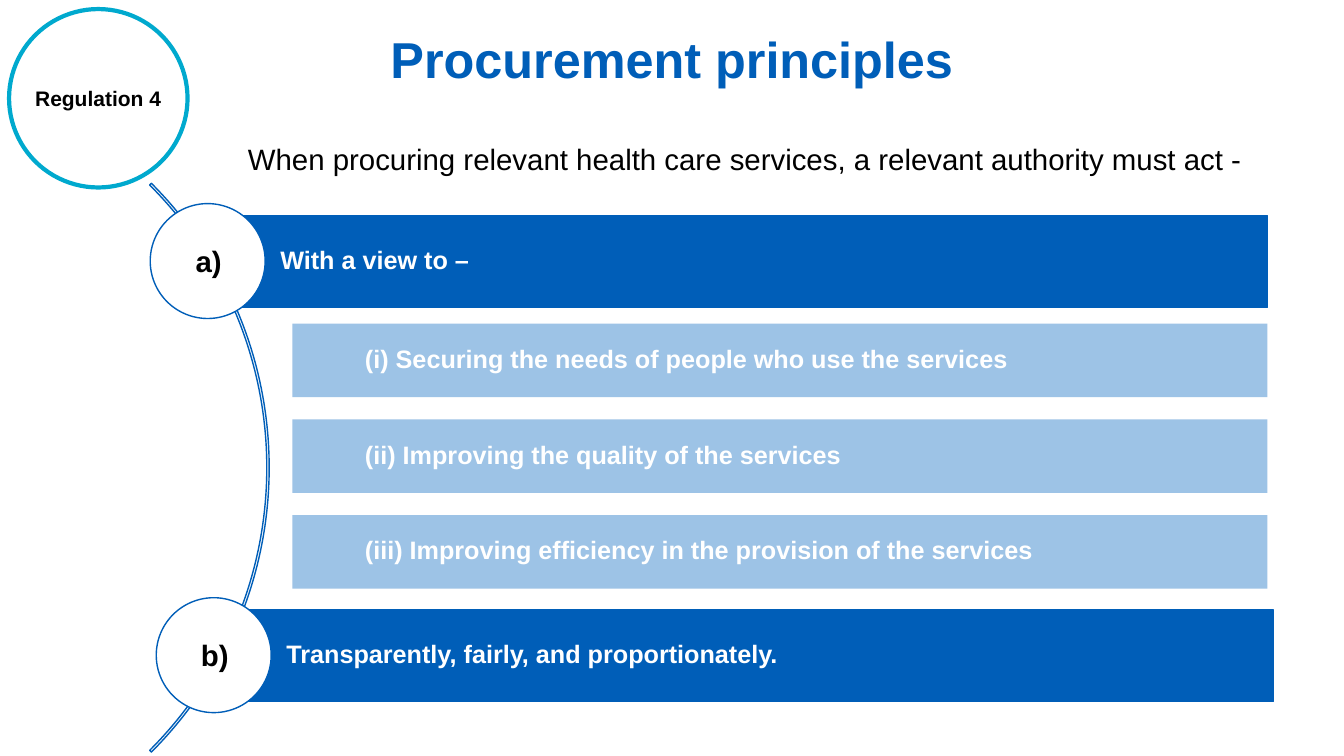
from pptx import Presentation
from pptx.dml.color import RGBColor
from pptx.enum.shapes import MSO_SHAPE
from pptx.enum.text import MSO_ANCHOR, MSO_AUTO_SIZE, PP_ALIGN
from pptx.util import Inches, Pt

RECTANGLE = MSO_SHAPE.RECTANGLE
OVAL = MSO_SHAPE.OVAL
BLOCK_ARC = MSO_SHAPE.BLOCK_ARC
TOP = MSO_ANCHOR.TOP
MIDDLE = MSO_ANCHOR.MIDDLE
LEFT = PP_ALIGN.LEFT
CENTER = PP_ALIGN.CENTER
FIT_SHAPE = MSO_AUTO_SIZE.SHAPE_TO_FIT_TEXT

FONT = "Arial"
BLUE = "005EB8"
PALE_BLUE = "9DC3E6"
TEAL = "00A9CE"
WHITE = "FFFFFF"
BLACK = "000000"

AIMS = [
    "(i) Securing the needs of people who use the services",
    "(ii) Improving the quality of the services",
    "(iii) Improving efficiency in the provision of the services",
]
AIM_TOP = 3.21
AIM_PITCH = 0.95


def rgb(color):
    return RGBColor.from_string(color)


def write(tf, text, size=18, color=BLACK, bold=True, align=LEFT,
          anchor=TOP, spacing=1.0):
    tf.vertical_anchor = anchor
    p = tf.paragraphs[0]
    p.alignment = align
    p.line_spacing = spacing
    r = p.add_run()
    r.text = text
    r.font.name = FONT
    r.font.size = Pt(size)
    r.font.bold = bold
    r.font.color.rgb = rgb(color)


def add_shape(s, kind, left, top, width, height, fill=None, line=None, weight=1):
    sp = s.shapes.add_shape(kind, Inches(left), Inches(top),
                            Inches(width), Inches(height))
    sp.shadow.inherit = False
    if fill:
        sp.fill.solid()
        sp.fill.fore_color.rgb = rgb(fill)
    else:
        sp.fill.background()
    if line:
        sp.line.color.rgb = rgb(line)
        sp.line.width = Pt(weight)
    else:
        sp.line.fill.background()
    return sp


def add_text(s, text, left, top, width, height, wrap=True, **fmt):
    box = s.shapes.add_textbox(Inches(left), Inches(top),
                               Inches(width), Inches(height))
    tf = box.text_frame
    tf.word_wrap = wrap
    if not wrap:
        tf.auto_size = FIT_SHAPE
    write(tf, text, **fmt)


def add_bar(s, text, left, top, width, height, fill, line=None):
    sp = add_shape(s, RECTANGLE, left, top, width, height, fill, line)
    tf = sp.text_frame
    tf.word_wrap = True
    tf.margin_left = Inches(0.72)
    tf.margin_right = tf.margin_top = tf.margin_bottom = Inches(0.05)
    write(tf, text, color=WHITE, anchor=MIDDLE, spacing=0.9)


def add_principle(s, letter, text, left, top):
    add_bar(s, text, left + 0.57, top + 0.12, 10.51, 0.91, BLUE, BLUE)
    add_shape(s, OVAL, left, top, 1.14, 1.14, WHITE, BLUE)
    add_text(s, letter, left + 0.3, top + 0.34, 0.56, 0.45,
             wrap=False, size=21, align=CENTER)


def main():
    prs = Presentation()
    prs.slide_width = Inches(13.33)
    prs.slide_height = Inches(7.5)
    s = prs.slides.add_slide(prs.slide_layouts[6])

    add_text(s, "When procuring relevant health care services, "
             "a relevant authority must act -",
             2.36, 1.39, 10.21, 0.58, size=21, bold=False, spacing=0.9)
    add_text(s, "Procurement principles", 3.24, 0.08, 6.85, 0.99,
             size=36, color=BLUE, align=CENTER, anchor=MIDDLE)

    arc = add_shape(s, BLOCK_ARC, -5.31, 0.65, 7.98, 7.98, line=BLUE)
    for i, value in enumerate((189, 27, 0.003)):
        arc.adjustments[i] = value

    add_principle(s, "b)", "Transparently, fairly, and proportionately.", 1.55, 5.93)
    add_principle(s, "a)", "With a view to –", 1.49, 2.02)

    add_shape(s, OVAL, 0.09, 0.09, 1.77, 1.77, WHITE, TEAL, 3)
    add_text(s, "Regulation 4", 0.25, 0.8, 1.46, 0.35, wrap=False, size=15)

    for i, aim in enumerate(AIMS):
        add_bar(s, aim, 2.9, AIM_TOP + i * AIM_PITCH, 9.67, 0.73, PALE_BLUE)

    prs.save("out.pptx")


if __name__ == "__main__":
    main()
